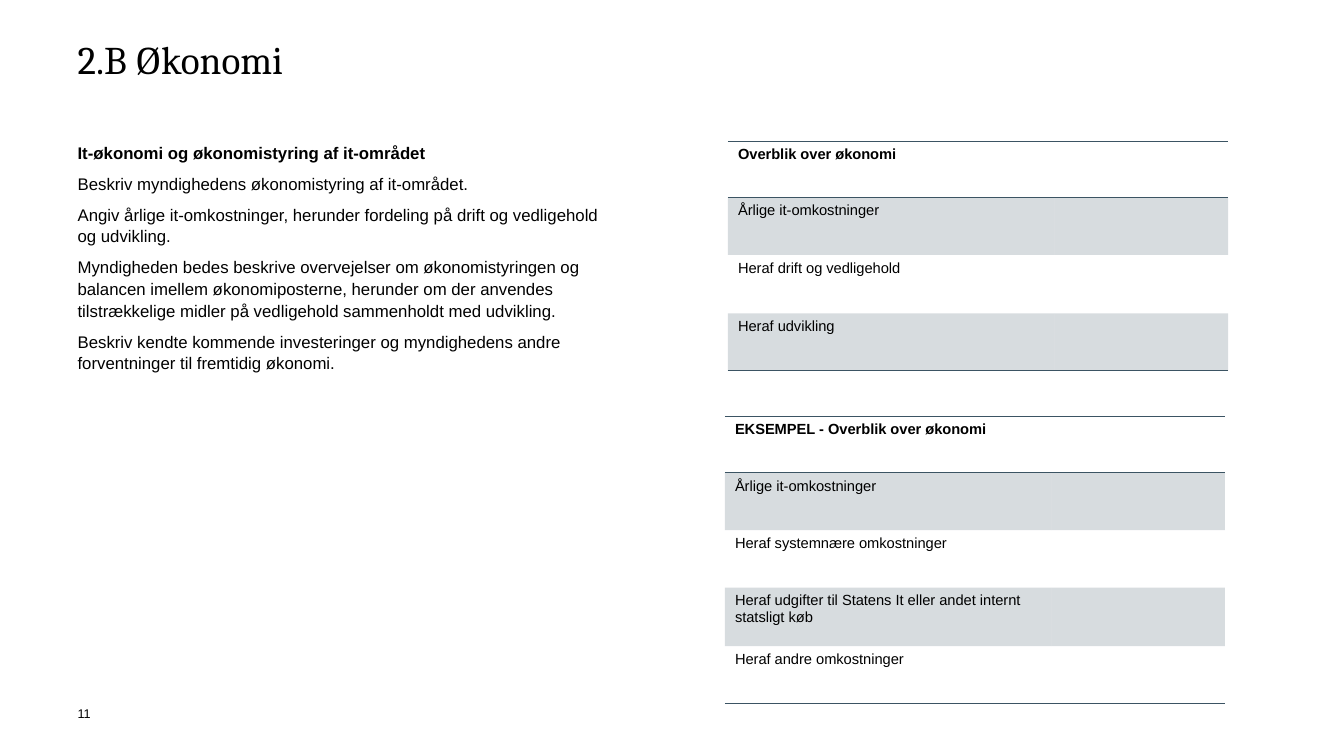
import pptx
import pptx.util
import pptx.dml.color
import pptx.enum.text
import pptx.oxml
import pptx.oxml.ns

Inches, Pt = pptx.util.Inches, pptx.util.Pt
qn = pptx.oxml.ns.qn

# Content
TITLE = "2.B Økonomi"
PAGE = "11"
BODY = [
    "It-økonomi og økonomistyring af it-området",
    "Beskriv myndighedens økonomistyring af it-området.",
    "Angiv årlige it-omkostninger, herunder fordeling på drift og vedligehold og udvikling.",
    "Myndigheden bedes beskrive overvejelser om økonomistyringen og balancen imellem "
    "økonomiposterne, herunder om der anvendes tilstrækkelige midler på vedligehold "
    "sammenholdt med udvikling.",
    "Beskriv kendte kommende investeringer og myndighedens andre forventninger til "
    "fremtidig økonomi.",
]
TABLES = [
    dict(left=7.22, top=1.4, heights=[0.56, 0.57, 0.58, 0.57],
         labels=["Overblik over økonomi", "Årlige it-omkostninger",
                 "Heraf drift og vedligehold", "Heraf udvikling"]),
    dict(left=7.19, top=4.13, heights=[0.56, 0.57, 0.57, 0.58, 0.57],
         labels=["EKSEMPEL - Overblik over økonomi", "Årlige it-omkostninger",
                 "Heraf systemnære omkostninger",
                 "Heraf udgifter til Statens It eller andet internt statsligt køb",
                 "Heraf andre omkostninger"]),
]

# Look
COLORS = {"text": "000000", "slate": "3B5463"}
MARGIN = 0.77
COLUMNS = [3.24, 1.72]
BAND_ALPHA = 20
NO_STYLE = "{2D5ABB26-0587-4C30-8999-92F81FD0307C}"

prs = pptx.Presentation()
prs.slide_width, prs.slide_height = Inches(13.33), Inches(7.5)
s = prs.slides.add_slide(prs.slide_layouts[6])


def write(tf, lines, size, font="Arial", spacing=None, before=0, bold_first=False):
    for i, line in enumerate(lines):
        p = tf.paragraphs[0] if i == 0 else tf.add_paragraph()
        p.text = line
        p.line_spacing = spacing
        p.space_before = Pt(before if i else 0)
        for r in p.runs:
            r.font.name, r.font.size = font, Pt(size)
            r.font.bold = bold_first and i == 0
            r.font.color.rgb = pptx.dml.color.RGBColor.from_string(COLORS["text"])


def add_text(box, lines, size, **look):
    tf = s.shapes.add_textbox(*map(Inches, box)).text_frame
    tf.word_wrap = True
    tf.margin_left = tf.margin_top = tf.margin_right = tf.margin_bottom = 0
    tf.vertical_anchor = pptx.enum.text.MSO_ANCHOR.TOP
    write(tf, lines, size, **look)


def add_borders(cell, sides):
    tcPr = cell._tc.get_or_add_tcPr()
    for i, side in enumerate(sides):
        tcPr.insert(i, pptx.oxml.parse_xml(
            f'<a:ln{side} xmlns:a="http://schemas.openxmlformats.org/drawingml/2006/main"'
            f' w="{Pt(1)}"><a:solidFill><a:srgbClr val="{COLORS["slate"]}"/></a:solidFill>'
            f'</a:ln{side}>'))


def fill_band(cell):
    cell.fill.solid()
    cell.fill.fore_color.rgb = pptx.dml.color.RGBColor.from_string(COLORS["slate"])
    color = cell._tc.tcPr.find(".//" + qn("a:srgbClr"))
    color.makeelement(qn("a:alpha"), {})
    alpha = pptx.oxml.parse_xml(
        '<a:alpha xmlns:a="http://schemas.openxmlformats.org/drawingml/2006/main"'
        f' val="{BAND_ALPHA * 1000}"/>')
    color.append(alpha)


def add_overview(left, top, heights, labels):
    frame = s.shapes.add_table(len(labels), len(COLUMNS), Inches(left), Inches(top),
                               Inches(sum(COLUMNS)), Inches(sum(heights)))
    table = frame.table
    table._tbl.tblPr.find(qn("a:tableStyleId")).text = NO_STYLE
    for col, width in zip(table.columns, COLUMNS):
        col.width = Inches(width)
    for i, (label, height) in enumerate(zip(labels, heights)):
        table.rows[i].height = Inches(height)
        write(table.cell(i, 0).text_frame, [label], 10.5, bold_first=i == 0)
        for cell in table.rows[i].cells:
            # Every other row is shaded; rules frame the header and close the table
            if i % 2:
                fill_band(cell)
            else:
                cell.fill.background()
            add_borders(cell, "TB" if i == 0 else "B" if i == len(labels) - 1 else "")


# Page number, title and body text
add_text((MARGIN, 7, 0.31, 0.3), [PAGE], 9)
add_text((MARGIN, 0.4, 11.8, 1.02), [TITLE], 28, font="Cambria", spacing=0.9)
add_text((MARGIN, 1.4, 5.2, 3.05), BODY, 12, spacing=1.08, before=6.5, bold_first=True)

# Overview tables
for overview in TABLES:
    add_overview(**overview)

prs.save("out.pptx")
